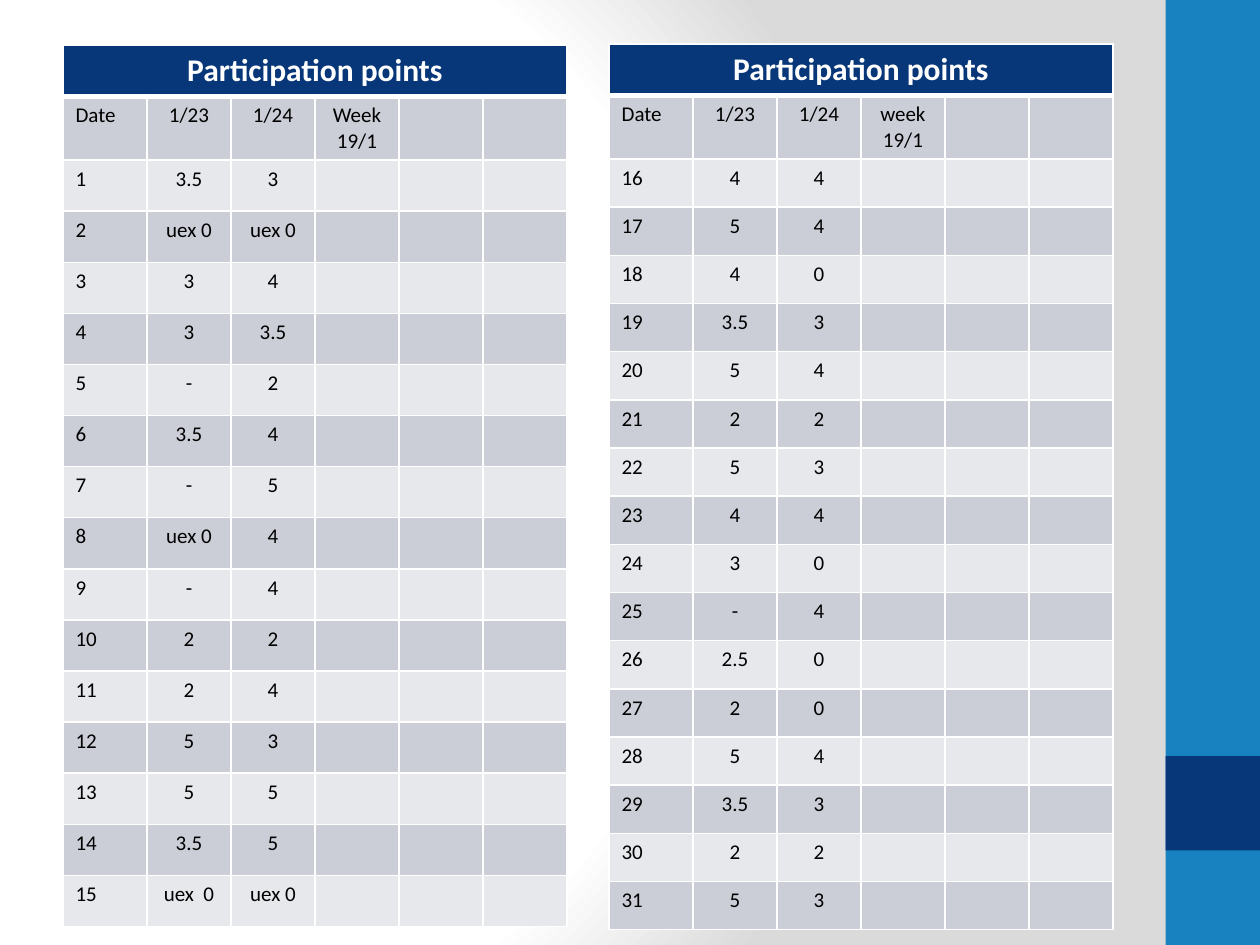
from dataclasses import dataclass

from lxml.etree import SubElement
from pptx import Presentation
from pptx.dml.color import RGBColor
from pptx.enum.shapes import MSO_SHAPE
from pptx.enum.text import PP_ALIGN
from pptx.oxml import parse_xml
from pptx.oxml.ns import nsdecls, qn
from pptx.util import Pt

COLORS = {
    "white": "FFFFFF",
    "black": "000000",
    "haze": "DADADA",
    "blue": "1782BF",
    "navy": "073779",
    "dark_band": "CCCED7",
    "light_band": "E7E8EC",
}
FONT = "Calibri"
COLUMNS = 6
COLUMN_WIDTH = 48


@dataclass
class Band:
    top: float
    height: float
    color: str


@dataclass
class PointsTable:
    left: float
    top: float
    title_height: float
    row_height: float
    week: str
    first_student: int
    points: list[tuple[str, str]]


SIDE_BANDS = [Band(0, 540, "blue"), Band(432, 54, "navy")]

POINTS_TABLES = [
    PointsTable(36, 25.7, 29.3, 29.2, "Week 19/1", 1, [
        ("3.5", "3"), ("uex 0", "uex 0"), ("3", "4"), ("3", "3.5"), ("-", "2"),
        ("3.5", "4"), ("-", "5"), ("uex 0", "4"), ("-", "4"), ("2", "2"),
        ("2", "4"), ("5", "3"), ("5", "5"), ("3.5", "5"), ("uex  0", "uex 0"),
    ]),
    PointsTable(348, 25.2, 29.1, 27.55, "week 19/1", 16, [
        ("4", "4"), ("5", "4"), ("4", "0"), ("3.5", "3"), ("5", "4"), ("2", "2"),
        ("5", "3"), ("4", "4"), ("3", "0"), ("-", "4"), ("2.5", "0"), ("2", "0"),
        ("5", "4"), ("3.5", "3"), ("2", "2"), ("5", "3"),
    ]),
]


def rgb(color: str) -> RGBColor:
    return RGBColor.from_string(COLORS[color])


def write_text(frame, text: str, *, size: float = 12, color: str = "black",
               bold: bool = False, align=PP_ALIGN.CENTER) -> None:
    paragraph = frame.paragraphs[0]
    paragraph.alignment = align
    if not text:
        # An empty cell still needs the small size to keep its row low
        SubElement(paragraph._p, qn("a:endParaRPr"), sz=str(size * 100))
        return
    run = paragraph.add_run()
    run.text = text
    run.font.name = FONT
    run.font.size = Pt(size)
    run.font.bold = bold
    run.font.color.rgb = rgb(color)


def set_borders(cell, top: float = 1, bottom: float = 1) -> None:
    properties = cell._tc.get_or_add_tcPr()
    for side, width in (("L", 1), ("R", 1), ("T", top), ("B", bottom)):
        line = SubElement(properties, qn(f"a:ln{side}"), w=str(Pt(width)))
        SubElement(SubElement(line, qn("a:solidFill")), qn("a:srgbClr"), val=COLORS["white"])


def set_background(slide) -> None:
    stops = "".join(
        f'<a:gs pos="{position}"><a:srgbClr val="{COLORS[color]}"/></a:gs>'
        for position, color in ((0, "white"), (75000, "white"), (100000, "haze")))
    slide.element.cSld.insert(0, parse_xml(
        f'<p:bg {nsdecls("p", "a")}><p:bgPr><a:gradFill rotWithShape="1">'
        f'<a:gsLst>{stops}</a:gsLst><a:path path="circle">'
        '<a:fillToRect l="20000" t="50000" r="100000" b="50000"/></a:path>'
        '</a:gradFill><a:effectLst/></p:bgPr></p:bg>'))


def draw_band(slide, band: Band) -> None:
    strip = slide.shapes.add_shape(
        MSO_SHAPE.RECTANGLE, Pt(666), Pt(band.top), Pt(54), Pt(band.height))
    strip.shadow.inherit = False
    strip.fill.solid()
    strip.fill.fore_color.rgb = rgb(band.color)
    strip.line.fill.background()


def draw_points_table(slide, content: PointsTable) -> None:
    rows = [["Participation points"], ["Date", "1/23", "1/24", content.week]]
    rows += [[str(student), *scores]
             for student, scores in enumerate(content.points, content.first_student)]
    heights = [content.title_height, 36] + [content.row_height] * len(content.points)
    grid = slide.shapes.add_table(
        len(rows), COLUMNS, Pt(content.left), Pt(content.top),
        Pt(COLUMNS * COLUMN_WIDTH), Pt(sum(heights))).table
    for column in grid.columns:
        column.width = Pt(COLUMN_WIDTH)

    for row, (texts, height) in enumerate(zip(rows, heights)):
        grid.rows[row].height = Pt(height)
        is_title = row == 0
        band_color = "navy" if is_title else "dark_band" if row % 2 else "light_band"
        for column in range(COLUMNS):
            cell = grid.cell(row, column)
            set_borders(cell, top=3 if row == 1 else 1, bottom=3 if is_title else 1)
            cell.fill.solid()
            cell.fill.fore_color.rgb = rgb(band_color)
            text = texts[column] if column < len(texts) else ""
            if is_title and text:
                write_text(cell.text_frame, text, size=18, color="white", bold=True)
            else:
                write_text(cell.text_frame, text,
                           align=PP_ALIGN.CENTER if column else PP_ALIGN.LEFT)
    grid.cell(0, 0).merge(grid.cell(0, COLUMNS - 1))


def main() -> None:
    presentation = Presentation()
    presentation.slide_width, presentation.slide_height = Pt(720), Pt(540)
    slide = presentation.slides.add_slide(presentation.slide_layouts[6])

    # Backdrop and side strip
    set_background(slide)
    for band in SIDE_BANDS:
        draw_band(slide, band)

    # Participation tables
    for content in POINTS_TABLES:
        draw_points_table(slide, content)

    presentation.save("out.pptx")


if __name__ == "__main__":
    main()
